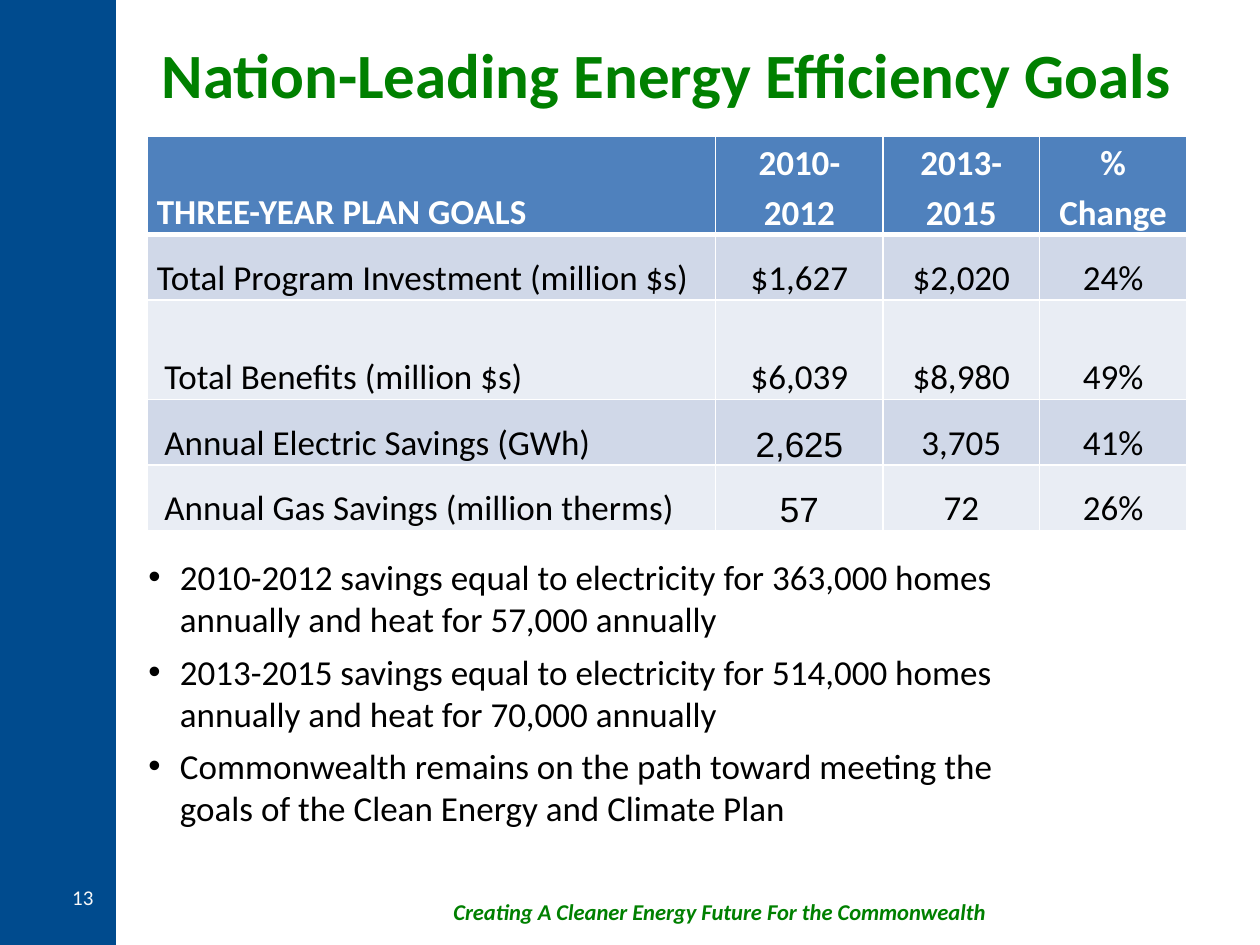
import pptx
import pptx.util
import pptx.dml.color
import pptx.enum.shapes
import pptx.enum.text
import pptx.oxml
import pptx.oxml.ns

Inches = pptx.util.Inches
Pt = pptx.util.Pt
ALIGN = pptx.enum.text.PP_ALIGN
ANCHOR = pptx.enum.text.MSO_ANCHOR

GREEN, BLUE, WHITE, BLACK = "008000", "004B8E", "FFFFFF", "000000"
HEADER_FILL = "4F81BD"
BAND_FILLS = ["D0D8E8", "E9EDF4"]
BODY = {"name": "Calibri", "size": Pt(20), "bold": False}

COLUMN_WIDTHS = [4.51, 1.33, 1.24, 1.17]
ROW_HEIGHTS = [0.78, 0.52, 0.79, 0.52, 0.52]
GOALS = [
    ["THREE-YEAR PLAN GOALS", "2010-2012", "2013-2015", "% Change"],
    ["Total Program Investment (million $s)", "$1,627", "$2,020", "24%"],
    ["Total Benefits (million $s)", "$6,039", "$8,980", "49%"],
    ["Annual Electric Savings (GWh)", "2,625", "3,705", "41%"],
    ["Annual Gas Savings (million therms)", "57", "72", "26%"],
]
ARIAL_CELLS = {(3, 1), (4, 1)}
SAVINGS_POINTS = [
    "2010-2012 savings equal to electricity for 363,000 homes annually and heat for 57,000 annually",
    "2013-2015 savings equal to electricity for 514,000 homes annually and heat for 70,000 annually",
    "Commonwealth remains on the path toward meeting the goals of the Clean Energy and Climate Plan",
]


def rgb(hex_value):
    return pptx.dml.color.RGBColor.from_string(hex_value)


def apply(target, values):
    for attribute, value in values.items():
        setattr(target, attribute, value)


def format_text(paragraph, text, font, color):
    run = paragraph.add_run()
    run.text = text
    apply(run.font, font)
    run.font.color.rgb = rgb(color)


def add_text(slide, box, text, font, color, align=ALIGN.LEFT, anchor=ANCHOR.TOP):
    frame = slide.shapes.add_textbox(*map(Inches, box)).text_frame
    apply(frame, {"word_wrap": True, "vertical_anchor": anchor})
    paragraph = frame.paragraphs[0]
    paragraph.alignment = align
    format_text(paragraph, text, font, color)


def add_side_band(slide):
    band = slide.shapes.add_shape(
        pptx.enum.shapes.MSO_SHAPE.RECTANGLE, 0, 0, Inches(0.92), Inches(7.5))
    band.shadow.inherit = False
    band.fill.solid()
    band.fill.fore_color.rgb = rgb(BLUE)
    band.line.fill.background()


def set_borders(cell, bottom_width):
    # Borders come before the fill in the cell properties
    properties = cell._tc.get_or_add_tcPr()
    widths = {"lnL": 1, "lnR": 1, "lnT": 1, "lnB": bottom_width}
    for position, (side, width) in enumerate(widths.items()):
        properties.insert(position, pptx.oxml.parse_xml(
            f'<a:{side} {pptx.oxml.ns.nsdecls("a")} w="{Pt(width)}">'
            f'<a:solidFill><a:srgbClr val="{WHITE}"/></a:solidFill></a:{side}>'))


def fill_cell(cell, row, column, text):
    is_header = row == 0
    is_label = column == 0
    is_arial = (row, column) in ARIAL_CELLS
    label_indent = Inches(0.06) if is_label and row > 1 else 0
    apply(cell, {
        "vertical_anchor": ANCHOR.BOTTOM,
        "margin_left": Pt(5.4) + label_indent, "margin_right": Pt(5.4),
        "margin_top": 0, "margin_bottom": 0,
    })
    cell.fill.solid()
    cell.fill.fore_color.rgb = rgb(HEADER_FILL if is_header else BAND_FILLS[(row - 1) % 2])
    set_borders(cell, 3 if is_header else 1)
    paragraph = cell.text_frame.paragraphs[0]
    apply(paragraph, {
        "alignment": ALIGN.LEFT if is_label else ALIGN.CENTER,
        "line_spacing": 1.0 if is_arial else 1.15,
    })
    font = {**BODY, "bold": is_header, "name": "Arial" if is_arial else "Calibri"}
    format_text(paragraph, text, font, WHITE if is_header else BLACK)


def add_goals_table(slide):
    table = slide.shapes.add_table(
        len(GOALS), len(COLUMN_WIDTHS), Inches(1.17), Inches(1.08),
        Inches(sum(COLUMN_WIDTHS)), Inches(sum(ROW_HEIGHTS))).table
    for column, width in zip(table.columns, COLUMN_WIDTHS):
        column.width = Inches(width)
    for row, height in zip(table.rows, ROW_HEIGHTS):
        row.height = Inches(height)
    for row, texts in enumerate(GOALS):
        for column, text in enumerate(texts):
            fill_cell(table.cell(row, column), row, column, text)


def add_bullets(slide, box, points):
    frame = slide.shapes.add_textbox(*map(Inches, box)).text_frame
    frame.word_wrap = True
    for index, point in enumerate(points):
        paragraph = frame.add_paragraph() if index else frame.paragraphs[0]
        properties = paragraph._p.get_or_add_pPr()
        properties.set("marL", str(Inches(0.25)))
        properties.set("indent", str(-Inches(0.25)))
        for bullet in ('<a:buFont {} typeface="Arial"/>', '<a:buChar {} char="•"/>'):
            properties.append(pptx.oxml.parse_xml(bullet.format(pptx.oxml.ns.nsdecls("a"))))
        paragraph.space_after = Pt(6)
        format_text(paragraph, point, BODY, BLACK)


def main():
    deck = pptx.Presentation()
    apply(deck, {"slide_width": Inches(10), "slide_height": Inches(7.5)})
    slide = deck.slides.add_slide(deck.slide_layouts[6])

    # Side band, footer and title
    add_side_band(slide)
    add_text(slide, (3.5, 7.08, 4.75, 0.42),
             "Creating A Cleaner Energy Future For the Commonwealth",
             {"name": "Calibri", "size": Pt(12.9), "bold": True, "italic": True}, GREEN)
    add_text(slide, (1.08, 0.17, 8.42, 0.83), "Nation-Leading Energy Efficiency Goals",
             {"name": "Calibri", "size": Pt(36), "bold": True}, GREEN,
             ALIGN.CENTER, ANCHOR.MIDDLE)

    # Savings points, page number and goals table
    add_bullets(slide, (1.08, 4.36, 7.5, 2.72), SAVINGS_POINTS)
    add_text(slide, (0.17, 6.92, 0.67, 0.4), "13", {"name": "Calibri", "size": Pt(12)},
             "F8F8F8", ALIGN.RIGHT, ANCHOR.MIDDLE)
    add_goals_table(slide)

    deck.save("out.pptx")


if __name__ == "__main__":
    main()
